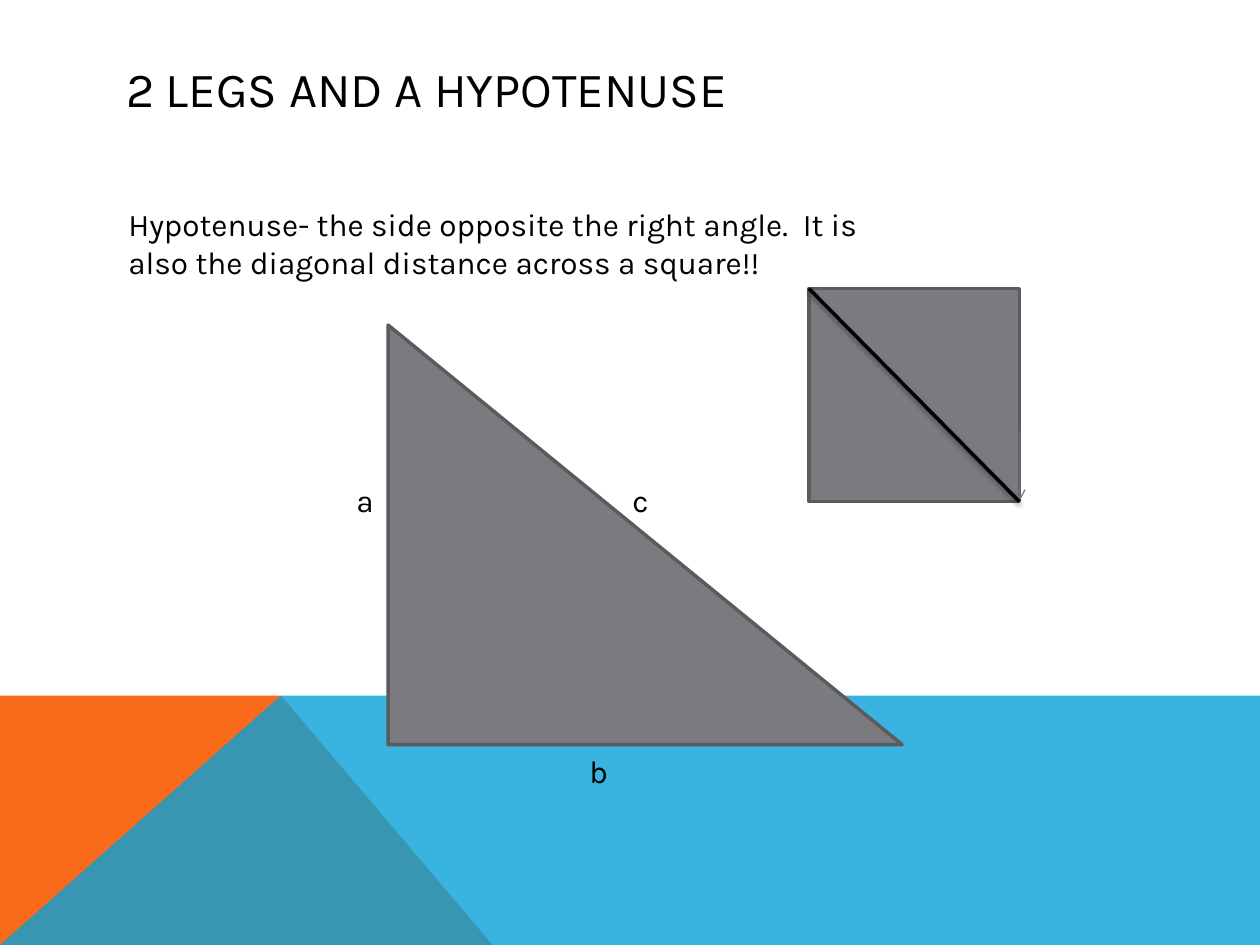
import pptx
import pptx.dml.color
import pptx.enum.shapes
import pptx.enum.text
import pptx.oxml
import pptx.oxml.ns
import pptx.util

Inches = pptx.util.Inches
SHAPES = pptx.enum.shapes.MSO_SHAPE
ANCHOR = pptx.enum.text.MSO_ANCHOR
COLORS = {
    "text": "000000",
    "orange": "F96A1B",
    "blue": "08A1D9",
    "figure": "797B7E",
    "outline": "5A5B5D",
    "arrow": "76787B",
    "diagonal": "000000",
}
FRAME_FORMAT = {"word_wrap": True, "vertical_anchor": ANCHOR.TOP}
TITLE_FRAME_FORMAT = {"word_wrap": True, "vertical_anchor": ANCHOR.MIDDLE}
TEXT_FORMAT = {"name": "Karla", "size": pptx.util.Pt(18), "bold": False}
TITLE_FORMAT = {**TEXT_FORMAT, "size": pptx.util.Pt(28)}


def rgb(key):
    return pptx.dml.color.RGBColor.from_string(COLORS[key])


def apply_format(target, values):
    for attribute, value in values.items():
        setattr(target, attribute, value)


def place(part, box):
    sides = ("left", "top", "width", "height")
    apply_format(part, {side: Inches(length) for side, length in zip(sides, box)})


def write(holder, wording, frame_format=FRAME_FORMAT, text_format=TEXT_FORMAT):
    frame = holder.text_frame
    apply_format(frame, frame_format)
    paragraph = frame.paragraphs[0]
    paragraph.alignment = pptx.enum.text.PP_ALIGN.LEFT
    run = paragraph.add_run()
    run.text = wording
    apply_format(run.font, text_format)
    run.font.color.rgb = rgb("text")


def add_label(slide, box, wording):
    write(slide.shapes.add_textbox(*map(Inches, box)), wording)


def add_title(slide, box, wording):
    title = slide.shapes.title
    place(title, box)
    write(title, wording, TITLE_FRAME_FORMAT, TITLE_FORMAT)


def add_panel(slide, corners, color):
    points = [(Inches(x), Inches(y)) for x, y in corners]
    builder = slide.shapes.build_freeform(*points[0], scale=1.0)
    builder.add_line_segments(points[1:], close=True)
    panel = builder.convert_to_shape()
    panel.shadow.inherit = False
    panel.fill.solid()
    panel.fill.fore_color.rgb = rgb(color)
    panel.line.fill.background()
    return panel


def add_footer_band(slide, box):
    left, top, width, height = box
    right, bottom = left + width, top + height
    peak = (left + 2.23, top)
    add_panel(slide, [(left, bottom), (left, top), peak, (left + 3.91, bottom)], "orange")
    overlay = add_panel(slide, [(left, bottom), peak, (right, top), (right, bottom)], "blue")
    tint = overlay.fill._xPr.find(".//" + pptx.oxml.ns.qn("a:srgbClr"))
    tint.append(pptx.oxml.parse_xml(
        f'<a:alpha {pptx.oxml.ns.nsdecls("a")} val="80000"/>'))


def add_figure(slide, preset, box):
    figure = slide.shapes.add_shape(preset, *map(Inches, box))
    figure.shadow.inherit = False
    figure.fill.solid()
    figure.fill.fore_color.rgb = rgb("figure")
    figure.line.color.rgb = rgb("outline")
    figure.line.width = pptx.util.Pt(2)


def add_line(slide, start, end, color, weight, effect=""):
    line = slide.shapes.add_connector(
        pptx.enum.shapes.MSO_CONNECTOR.STRAIGHT, *map(Inches, start + end))
    line.line.color.rgb = rgb(color)
    line.line.width = pptx.util.Pt(weight)
    line._element.spPr.append(pptx.oxml.parse_xml(
        f'<a:effectLst {pptx.oxml.ns.nsdecls("a")}>{effect}</a:effectLst>'))
    return line


def add_triangle(slide, box):
    left, top, width, height = box
    add_figure(slide, SHAPES.RIGHT_TRIANGLE, box)
    side_top = top + 1.19
    add_label(slide, (left - 0.35, side_top, 0.33, 0.42), "a")
    add_label(slide, (left + 1.5, top + height + 0.01, 0.33, 0.42), "b")
    add_label(slide, (left + 1.84, side_top, 0.42, 0.42), "c")


def add_square(slide, box):
    left, top, width, height = box
    corner = (left + width, top + height)
    add_figure(slide, SHAPES.RECTANGLE, box)
    arrow = add_line(slide, (corner[0], top + 1.13), corner, "arrow", 0.75)
    arrow.line._get_or_add_ln().append(pptx.oxml.parse_xml(
        f'<a:tailEnd {pptx.oxml.ns.nsdecls("a")} type="arrow"/>'))
    shadow = (
        f'<a:outerShdw blurRad="{pptx.util.Pt(3.1)}" dist="{pptx.util.Pt(1.6)}" '
        f'dir="5400000" rotWithShape="0"><a:srgbClr val="{COLORS["diagonal"]}">'
        '<a:alpha val="38000"/></a:srgbClr></a:outerShdw>')
    add_line(slide, (left, top), corner, "diagonal", 2, shadow)


def main():
    deck = pptx.Presentation()
    deck.slide_width, deck.slide_height = Inches(10), Inches(7.5)
    slide = deck.slides.add_slide(deck.slide_layouts[5])
    add_footer_band(slide, (0, 5.52, 10, 1.98))
    add_title(slide, (0.9, 0.4, 8.22, 0.6), "2 LEGS AND A HYPOTENUSE")
    add_triangle(slide, (3.08, 2.58, 4.08, 3.33))
    add_label(
        slide, (0.92, 1.58, 6.17, 0.71),
        "Hypotenuse- the side opposite the right angle.  "
        "It is also the diagonal distance across a square!!")
    add_square(slide, (6.42, 2.29, 1.67, 1.69))
    deck.save("out.pptx")


if __name__ == "__main__":
    main()
